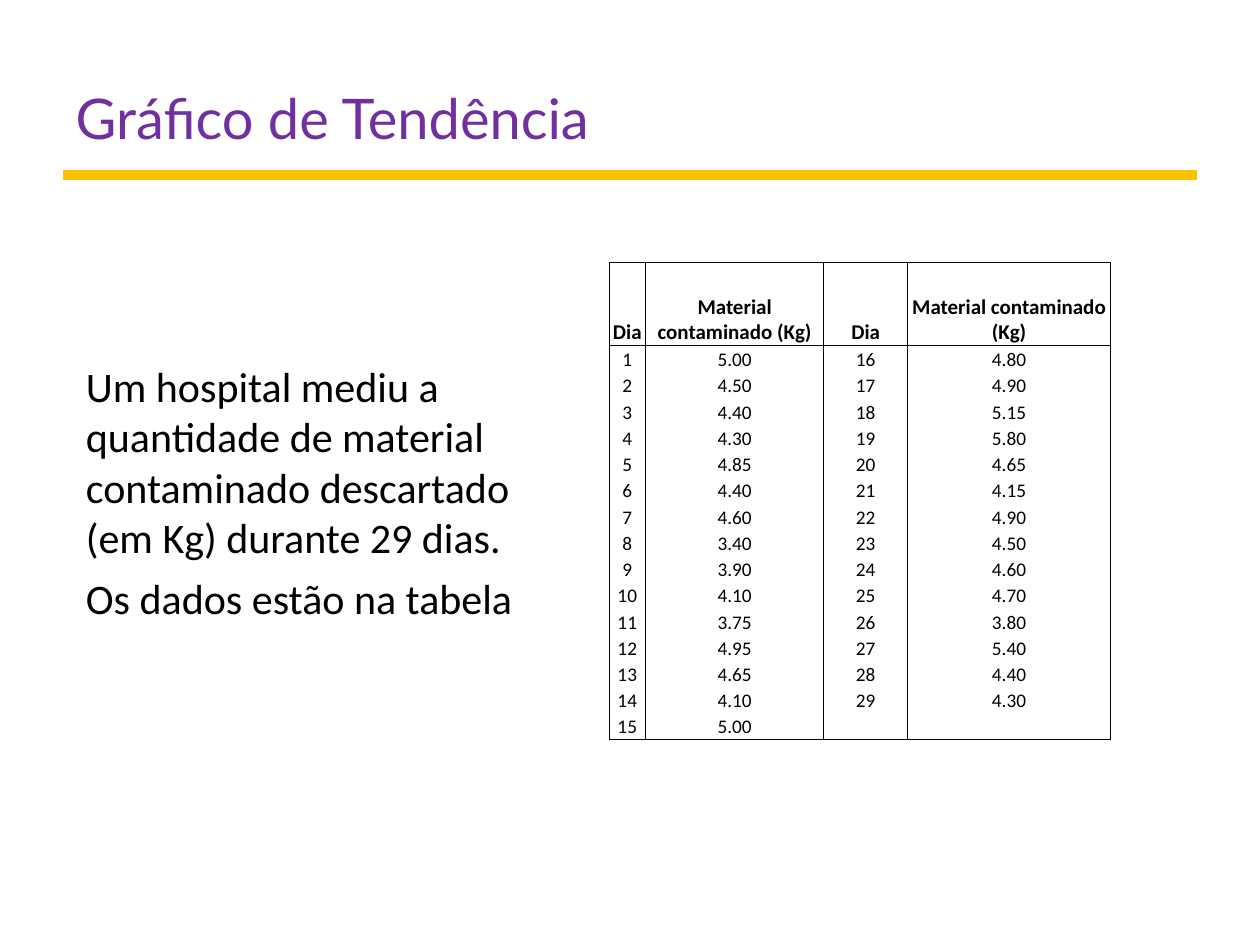
from dataclasses import dataclass

from lxml.etree import SubElement
from pptx import Presentation
from pptx.dml.color import RGBColor
from pptx.enum.shapes import MSO_CONNECTOR
from pptx.enum.text import MSO_ANCHOR, MSO_AUTO_SIZE, PP_ALIGN
from pptx.oxml.ns import qn
from pptx.util import Pt


@dataclass
class Column:
    heading: str
    width: float
    values: list[str]


FIRST_HALF = "5.00 4.50 4.40 4.30 4.85 4.40 4.60 3.40 3.90 4.10 3.75 4.95 4.65 4.10 5.00"
SECOND_HALF = "4.80 4.90 5.15 5.80 4.65 4.15 4.90 4.50 4.60 4.70 3.80 5.40 4.40 4.30"
DAY, WEIGHT = "Dia", "Material contaminado (Kg)"
COLUMNS = [
    Column(DAY, 20.9, [str(day) for day in range(1, 16)]),
    Column(WEIGHT, 101.8, FIRST_HALF.split()),
    Column(DAY, 48, [str(day) for day in range(16, 30)]),
    Column(WEIGHT, 115.9, SECOND_HALF.split()),
]
HEADER_HEIGHT, ROW_HEIGHT = 47.5, 15


def color(value: str) -> RGBColor:
    return RGBColor.from_string(value)


def write(p, text: str, *, size: float, font="Calibri", fill="000000",
          bold=False, align=PP_ALIGN.LEFT, before: float = 0) -> None:
    p.alignment = align
    p.space_before = Pt(before)
    if not text:
        # An empty cell needs its own size, or its row grows.
        SubElement(p._p, qn("a:endParaRPr"), sz=str(size * 100))
        return
    r = p.add_run()
    r.text = text
    r.font.name, r.font.size, r.font.bold = font, Pt(size), bold
    r.font.color.rgb = color(fill)


def set_borders(cell, sides: str) -> None:
    """Draw thin black lines on the given sides (of L, R, T, B) only."""
    tc_pr = cell._tc.get_or_add_tcPr()
    for side in "LRTB":
        ln = SubElement(tc_pr, qn(f"a:ln{side}"), w=str(Pt(0.5)))
        if side in sides:
            fill = SubElement(ln, qn("a:solidFill"))
            SubElement(fill, qn("a:srgbClr"), val="000000")
        else:
            SubElement(ln, qn("a:noFill"))


def fill_cell(cell, text: str, sides: str, *, size: float, bold: bool) -> None:
    cell.vertical_anchor = MSO_ANCHOR.BOTTOM
    cell.margin_left = cell.margin_right = cell.margin_top = Pt(0.7)
    cell.margin_bottom = Pt(0)
    set_borders(cell, sides)
    cell.fill.background()
    write(cell.text_frame.paragraphs[0], text, size=size, bold=bold, align=PP_ALIGN.CENTER)


def add_title(s, text: str) -> None:
    title = s.shapes.title
    title.left, title.top, title.width, title.height = Pt(36), Pt(18), Pt(648), Pt(72)
    tf = title.text_frame
    tf.auto_size = MSO_AUTO_SIZE.NONE
    tf.vertical_anchor = MSO_ANCHOR.BOTTOM
    write(tf.paragraphs[0], text, size=32, font="Lato", fill="7030A0")


def add_rule(s) -> None:
    rule = s.shapes.add_connector(MSO_CONNECTOR.STRAIGHT, Pt(36), Pt(100), Pt(684), Pt(100))
    rule.line.color.rgb = color("FFC000")
    rule.line.width = Pt(6)
    SubElement(rule._element.spPr, qn("a:effectLst"))


def add_data_table(s, columns: list[Column]) -> None:
    last = max(len(column.values) for column in columns)
    width = sum(column.width for column in columns)
    height = HEADER_HEIGHT + last * ROW_HEIGHT
    table = s.shapes.add_table(last + 1, len(columns), Pt(348), Pt(150),
                               Pt(width), Pt(height)).table
    table.first_row = table.horz_banding = False
    for i, row in enumerate(table.rows):
        row.height = Pt(ROW_HEIGHT if i else HEADER_HEIGHT)
    for j, column in enumerate(columns):
        table.columns[j].width = Pt(column.width)
        fill_cell(table.cell(0, j), column.heading, "LRTB", size=12, bold=True)
        for i in range(1, last + 1):
            text = column.values[i - 1] if i <= len(column.values) else ""
            sides = "LR" + "T" * (i == 1) + "B" * (i == last)
            fill_cell(table.cell(i, j), text, sides, size=11, bold=False)


def add_description(s) -> None:
    tf = s.shapes.add_textbox(Pt(42), Pt(202.5), Pt(276), Pt(158.5)).text_frame
    tf.word_wrap = True
    tf.auto_size = MSO_AUTO_SIZE.SHAPE_TO_FIT_TEXT
    write(tf.paragraphs[0], "Um hospital mediu a quantidade de material contaminado "
          "descartado (em Kg) durante 29 dias.", size=24)
    write(tf.add_paragraph(), "Os dados estão na tabela", size=24, before=5.8)


def main() -> None:
    prs = Presentation()
    prs.slide_width, prs.slide_height = Pt(720), Pt(540)
    s = prs.slides.add_slide(prs.slide_layouts[5])
    add_rule(s)
    add_title(s, "Gráfico de Tendência")
    add_data_table(s, COLUMNS)
    add_description(s)
    prs.save("out.pptx")


if __name__ == "__main__":
    main()
